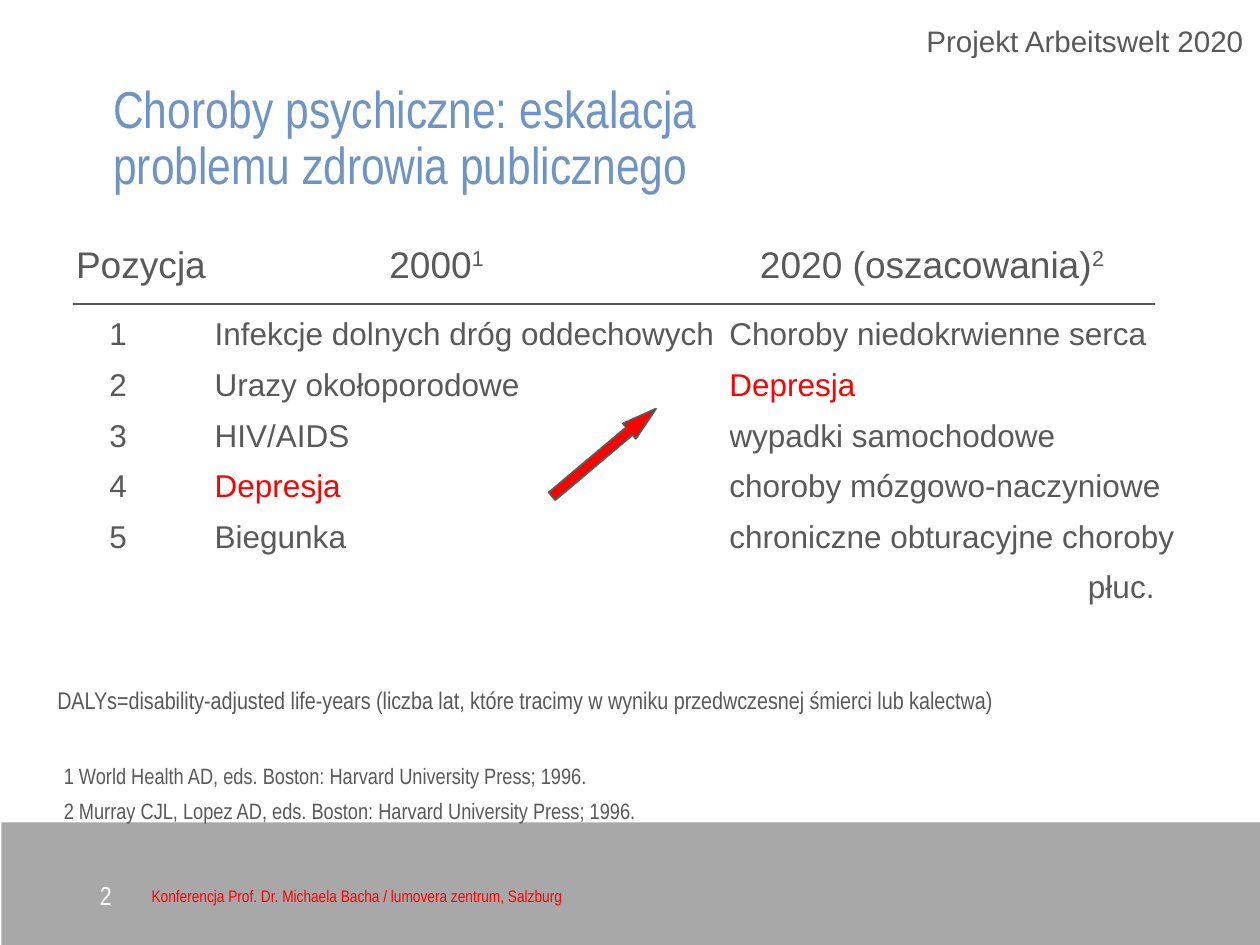
from lxml import etree
from pptx import Presentation
from pptx.dml.color import RGBColor
from pptx.enum.shapes import MSO_CONNECTOR, MSO_SHAPE
from pptx.enum.text import MSO_ANCHOR as ANCHOR, MSO_AUTO_SIZE as AUTO_SIZE, PP_ALIGN as ALIGN
from pptx.oxml.ns import qn
from pptx.util import Inches, Pt

# Content
TITLE = "Choroby psychiczne: eskalacja problemu zdrowia publicznego"
PROJECT = "Projekt Arbeitswelt 2020"
HEADINGS = [("Pozycja", ""), ("2000", "1"), ("2020 (oszacowania)", "2")]
RANKING = [
    ("1", "Infekcje dolnych dróg oddechowych", "Choroby niedokrwienne serca"),
    ("2", "Urazy okołoporodowe", "Depresja"),
    ("3", "HIV/AIDS", "wypadki samochodowe"),
    ("4", "Depresja", "choroby mózgowo-naczyniowe"),
    ("5", "Biegunka", "chroniczne obturacyjne choroby\npłuc."),
]
HIGHLIGHTED = "Depresja"
DALYS = ("DALYs=disability-adjusted life-years (liczba lat, które tracimy "
         "w wyniku przedwczesnej śmierci lub kalectwa)")
SOURCES = ("1 World Health AD, eds. Boston: Harvard University Press; 1996.\n"
           "2 Murray CJL, Lopez AD, eds. Boston: Harvard University Press; 1996.")
FOOTER = "Konferencja Prof. Dr. Michaela Bacha / lumovera zentrum, Salzburg"
PAGE = "2"

# Style and table geometry
GREY, RED, BLUE, WHITE, BAND = "595959", "FF0000", "6E94C6", "FFFFFF", "A8A8A8"
WIDE, NARROW = "Arial", "Arial Narrow"
TABLE_LEFT, TABLE_TOP = 0.57, 1.65
COLUMN_WIDTHS = [1.04, 3.86, 3.39]
HEADING_HEIGHT, LINE_PITCH = 0.68, 0.38
HEADING_INDENTS = [0, 1.31, 0.23]
BODY_INDENTS = [0.25, 0, 0]
CONTINUATION_INDENT = 2.69


def color(value):
    return RGBColor.from_string(value)


def format_text(frame, size, font_name, font_color):
    for paragraph in frame.paragraphs:
        for run in paragraph.runs:
            run.font.size = Pt(size)
            run.font.name = font_name
            run.font.color.rgb = color(font_color)


def add_text(slide, text, box, size, font_name, font_color, anchor=ANCHOR.TOP,
             align=ALIGN.LEFT, inset=0.1, spacing=1.0, wrap=True):
    frame = slide.shapes.add_textbox(*map(Inches, box)).text_frame
    frame.text = text
    frame.word_wrap = wrap
    frame.vertical_anchor = anchor
    frame.margin_left = frame.margin_right = Inches(inset)
    frame.margin_top = frame.margin_bottom = Inches(inset / 2)
    for index, paragraph in enumerate(frame.paragraphs):
        paragraph.alignment = align
        paragraph.line_spacing = spacing
        paragraph.space_before = Pt(3 if index else 0)
    format_text(frame, size, font_name, font_color)


def add_ranking(slide):
    line_counts = [max(text.count("\n") + 1 for text in row) for row in RANKING]
    heights = [HEADING_HEIGHT] + [LINE_PITCH * count for count in line_counts]
    table = slide.shapes.add_table(
        len(heights), len(COLUMN_WIDTHS), Inches(TABLE_LEFT), Inches(TABLE_TOP),
        Inches(sum(COLUMN_WIDTHS)), Inches(sum(heights))).table
    table.first_row = table.horz_banding = False
    for column, width in zip(table.columns, COLUMN_WIDTHS):
        column.width = Inches(width)
    for row, height in zip(table.rows, heights):
        row.height = Inches(height)
    for cell in table.iter_cells():
        cell.fill.background()
        cell.margin_right = cell.margin_bottom = 0

    # Headings with superscript note numbers
    for index, (heading, note) in enumerate(HEADINGS):
        cell = table.cell(0, index)
        cell.vertical_anchor = ANCHOR.MIDDLE
        cell.margin_left = Inches(HEADING_INDENTS[index])
        cell.margin_top = 0
        cell.text_frame.text = heading
        if note:
            run = cell.text_frame.paragraphs[0].add_run()
            run.text = note
            run.font._element.set("baseline", "30000")
        format_text(cell.text_frame, 20, WIDE, GREY)

    # Ranked causes
    for row_index, row in enumerate(RANKING, 1):
        for index, text in enumerate(row):
            cell = table.cell(row_index, index)
            cell.margin_left = Inches(BODY_INDENTS[index])
            cell.margin_top = Inches(0.05)
            cell.text_frame.text = text
            for paragraph in cell.text_frame.paragraphs[1:]:
                paragraph.space_before = Pt(8)
                properties = paragraph._p.get_or_add_pPr()
                properties.set("marL", str(Inches(CONTINUATION_INDENT)))
            format_text(cell.text_frame, 17, WIDE, RED if text == HIGHLIGHTED else GREY)


def add_title(slide):
    title = slide.shapes.title
    title.left, title.top, title.width, title.height = map(Inches, (0.75, 0.58, 5.5, 1.16))
    frame = title.text_frame
    frame.text = TITLE
    frame.word_wrap = True
    frame.auto_size = AUTO_SIZE.NONE
    frame.vertical_anchor = ANCHOR.TOP
    frame.paragraphs[0].alignment = ALIGN.LEFT
    frame.paragraphs[0].line_spacing = 0.9
    format_text(frame, 28, NARROW, BLUE)


def main():
    presentation = Presentation()
    presentation.slide_width, presentation.slide_height = Inches(9.45), Inches(7.09)
    slide = presentation.slides.add_slide(presentation.slide_layouts[5])

    # Footer band
    band = slide.shapes.add_shape(MSO_SHAPE.RECTANGLE, *map(Inches, (0.01, 6.17, 9.44, 0.92)))
    band.shadow.inherit = False
    band.fill.solid()
    band.fill.fore_color.rgb = color(BAND)
    band.line.fill.background()

    add_title(slide)
    add_text(slide, PROJECT, (6.85, 0.12, 2.61, 0.37), 16, WIDE, GREY, wrap=False)
    add_ranking(slide)

    # Rule under the headings
    rule = slide.shapes.add_connector(
        MSO_CONNECTOR.STRAIGHT, *map(Inches, (0.55, 2.28, 8.66, 2.28)))
    rule.line.color.rgb = color(GREY)
    rule.line.width = Pt(1)
    etree.SubElement(rule._element.spPr, qn("a:effectLst"))

    # Arrow showing the rise of depression
    arrow = slide.shapes.add_shape(
        MSO_SHAPE.RIGHT_ARROW, *map(Inches, (4.02, 3.32, 1.02, 0.15)))
    arrow.adjustments[0], arrow.adjustments[1] = 0.5, 1.74
    arrow.rotation = 319.9
    arrow.shadow.inherit = False
    arrow.fill.solid()
    arrow.fill.fore_color.rgb = color(RED)
    arrow.line.color.rgb = color(GREY)
    arrow.line.width = Pt(1)

    # Notes and footer
    add_text(slide, DALYS, (0.43, 5.12, 8.6, 0.24), 13, NARROW, GREY,
             ANCHOR.MIDDLE, inset=0, spacing=1.1)
    add_text(slide, SOURCES, (0.38, 5.65, 5.45, 0.58), 12, NARROW, GREY, spacing=1.1)
    add_text(slide, FOOTER, (0.98, 6.53, 3.39, 0.38), 9, NARROW, RED,
             ANCHOR.MIDDLE, ALIGN.CENTER)
    add_text(slide, PAGE, (0.75, 6.36, 0.3, 0.47), 14, NARROW, WHITE,
             ANCHOR.BOTTOM, inset=0)

    presentation.save("out.pptx")


if __name__ == "__main__":
    main()
